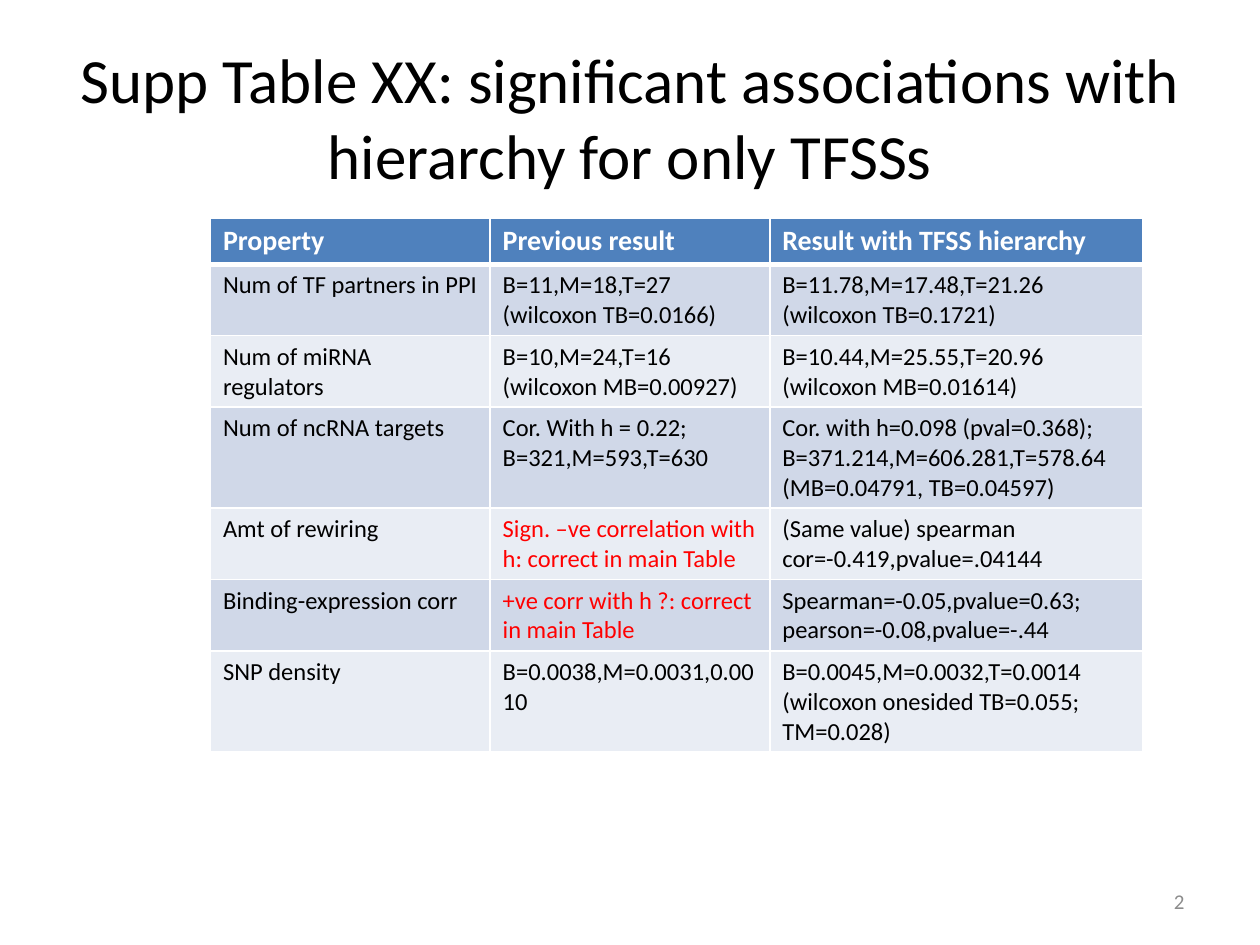
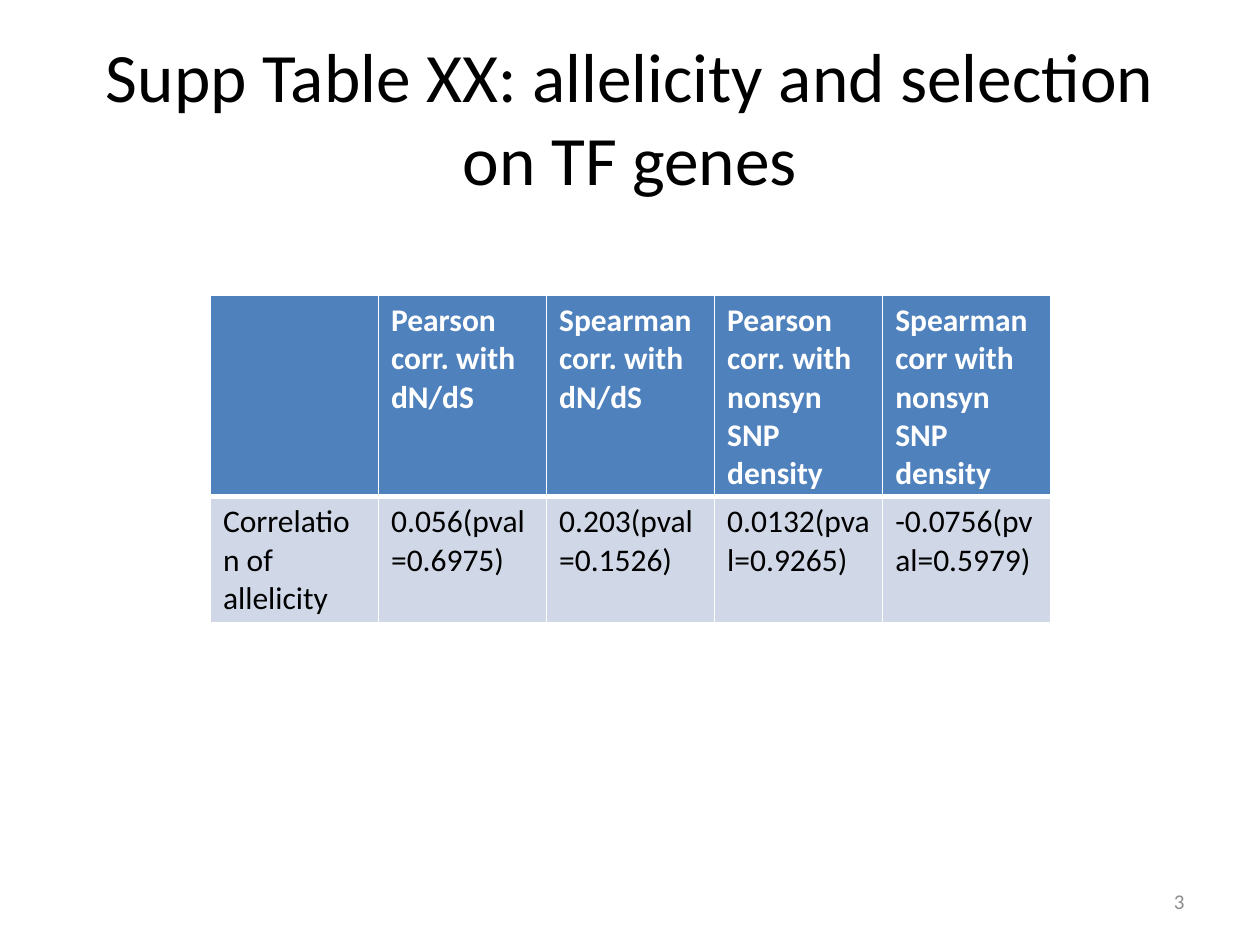
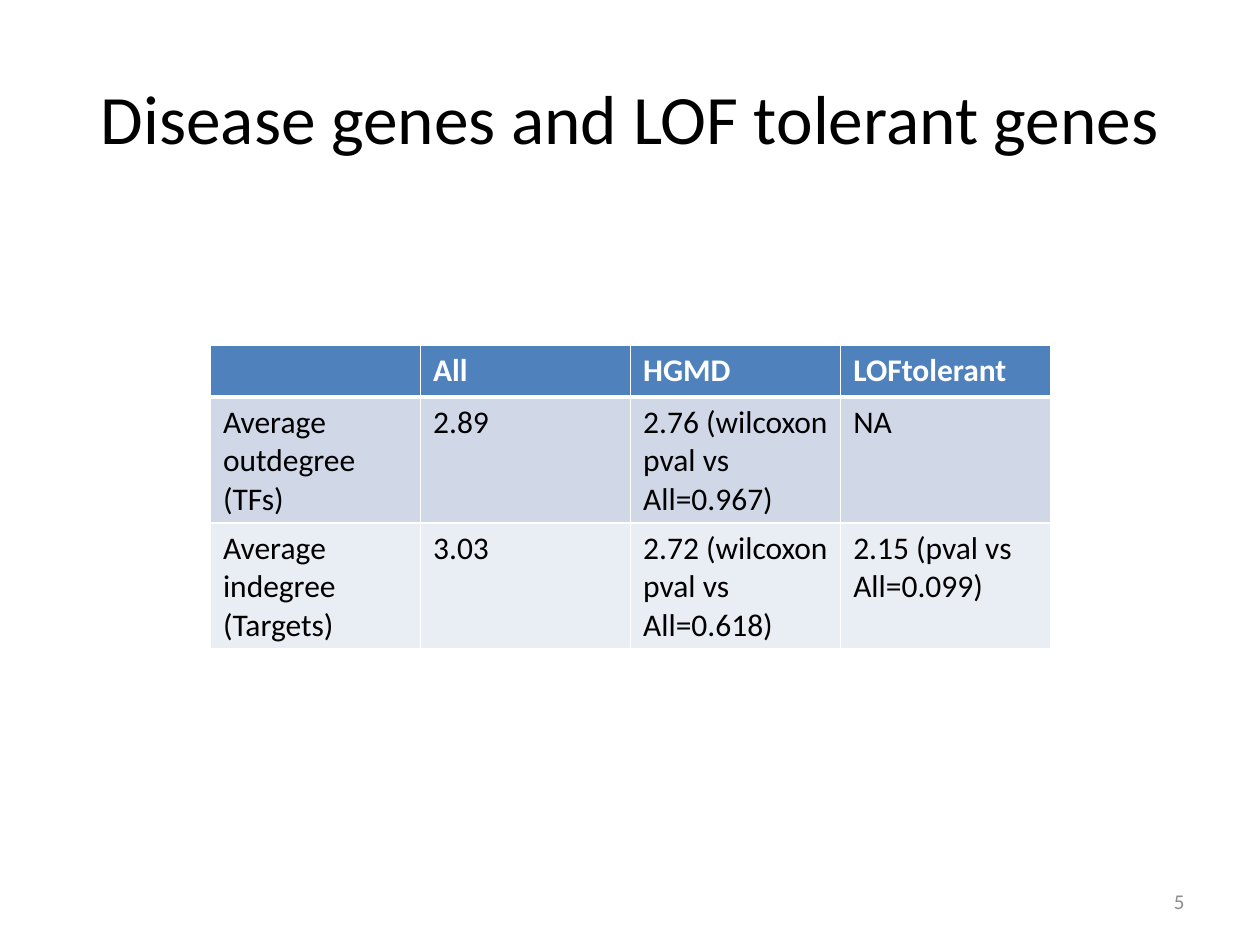
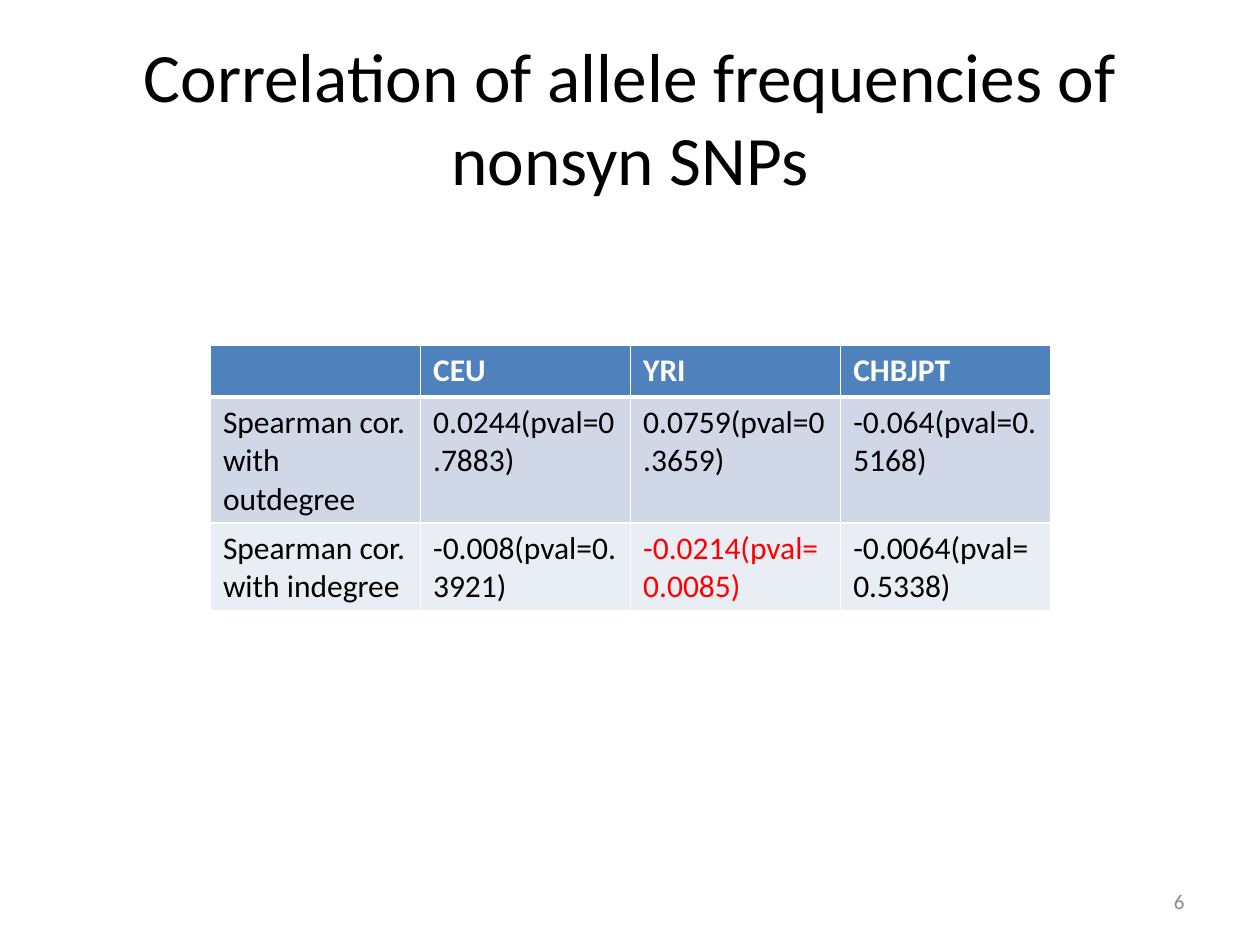
from dataclasses import dataclass

from lxml import etree
from pptx import Presentation
from pptx import util as u
from pptx.dml.color import RGBColor
from pptx.enum import text
from pptx.oxml.ns import qn


@dataclass(frozen=True)
class Theme:
    font: str = "Calibri"
    ink: str = "000000"
    white: str = "FFFFFF"
    header: str = "4F81BD"
    bands: tuple = ("D0D8E8", "E9EDF4")
    alert: str = "FF0000"
    muted: str = "8C8C8C"
    title: float = 39.6
    title_small: float = 36
    table_head: float = 18
    table_body: float = 18
    dense_head: float = 16
    dense_body: float = 14
    number: float = 12
    rule: float = 1
    header_rule: float = 3


T = Theme()
TABLE_LEFT = 1.67
TABLE_WIDTH = 6.67


def style_text(tf, size, color, bold=False, align=text.PP_ALIGN.LEFT):
    for p in tf.paragraphs:
        p.alignment = align
        for r in p.runs:
            r.font.name = T.font
            r.font.size = u.Pt(size)
            r.font.bold = bold
            r.font.color.rgb = RGBColor.from_string(color)


def add_text(s, words, box, size, color, align):
    tf = s.shapes.add_textbox(*map(u.Inches, box)).text_frame
    tf.word_wrap = True
    tf.vertical_anchor = text.MSO_ANCHOR.MIDDLE
    tf.text = words
    style_text(tf, size, color, align=align)


def add_slide(prs, title, number, size=T.title):
    s = prs.slides.add_slide(prs.slide_layouts[6])
    add_text(s, title, (0.5, 0.3, 9, 1.25), size, T.ink, text.PP_ALIGN.CENTER)
    add_text(s, str(number), (7.17, 6.95, 2.33, 0.4), T.number, T.muted, text.PP_ALIGN.RIGHT)
    return s


def set_borders(cell, top, bottom):
    tc_pr = cell._tc.get_or_add_tcPr()
    for side, width in (("L", T.rule), ("R", T.rule), ("T", top), ("B", bottom)):
        ln = etree.SubElement(tc_pr, qn(f"a:ln{side}"), w=str(u.Pt(width)))
        fill = etree.SubElement(ln, qn("a:solidFill"))
        etree.SubElement(fill, qn("a:srgbClr"), val=T.white)


def add_table(s, rows, top, widths=None, row_height=0.41,
              head_size=T.table_head, body_size=T.table_body, alerts=()):
    n = len(rows[0])
    widths = widths or [TABLE_WIDTH / n] * n
    box = (TABLE_LEFT, top, sum(widths), row_height * len(rows))
    table = s.shapes.add_table(len(rows), n, *map(u.Inches, box)).table
    table.horz_banding = False
    for column, width in zip(table.columns, widths):
        column.width = u.Inches(width)
    for i, row in enumerate(rows):
        head = i == 0
        for j, words in enumerate(row):
            cell = table.cell(i, j)
            cell.text = words
            set_borders(cell, T.header_rule if i == 1 else T.rule,
                        T.header_rule if head else T.rule)
            cell.fill.solid()
            fill = T.header if head else T.bands[(i - 1) % 2]
            cell.fill.fore_color.rgb = RGBColor.from_string(fill)
            color = T.white if head else T.alert if (i, j) in alerts else T.ink
            style_text(cell.text_frame, head_size if head else body_size, color, bold=head)


def hierarchy_slide(prs):
    s = add_slide(prs, "Supp Table XX: significant associations with hierarchy for only TFSSs",
                  2, T.title_small)
    rows = [
        ("Property", "Previous result", "Result with TFSS hierarchy"),
        ("Num of TF partners in PPI", "B=11,M=18,T=27\n(wilcoxon TB=0.0166)",
         "B=11.78,M=17.48,T=21.26 (wilcoxon TB=0.1721)"),
        ("Num of miRNA regulators", "B=10,M=24,T=16 (wilcoxon MB=0.00927)",
         "B=10.44,M=25.55,T=20.96\n(wilcoxon MB=0.01614)"),
        ("Num of ncRNA targets", "Cor. With h = 0.22;\nB=321,M=593,T=630",
         "Cor. with h=0.098 (pval=0.368);\n"
         "B=371.214,M=606.281,T=578.64 (MB=0.04791, TB=0.04597)"),
        ("Amt of rewiring", "Sign. –ve correlation with h: correct in main Table",
         "(Same value) spearman cor=-0.419,pvalue=.04144"),
        ("Binding-expression corr", "+ve corr with h ?: correct in main Table",
         "Spearman=-0.05,pvalue=0.63; pearson=-0.08,pvalue=-.44"),
        ("SNP density", "B=0.0038,M=0.0031,0.0010",
         "B=0.0045,M=0.0032,T=0.0014\n(wilcoxon onesided TB=0.055; TM=0.028)"),
    ]
    add_table(s, rows, 1.73, (2.22, 2.22, 2.96), 0.24,
              T.dense_head, T.dense_body, alerts={(4, 1), (5, 1)})


def allelicity_slide(prs):
    s = add_slide(prs, "Supp Table XX: allelicity and selection on TF genes", 3)
    rows = [
        ("", "Pearson corr. with dN/dS", "Spearman corr. with dN/dS",
         "Pearson corr. with nonsyn SNP density", "Spearman corr with nonsyn SNP density"),
        ("Correlation of allelicity", "0.056(pval=0.6975)", "0.203(pval=0.1526)",
         "0.0132(pval=0.9265)", "-0.0756(pval=0.5979)"),
    ]
    add_table(s, rows, 2.34)


def disease_slide(prs):
    s = add_slide(prs, "Disease genes and LOF tolerant genes", 5)
    rows = [
        ("", "All", "HGMD", "LOFtolerant"),
        ("Average outdegree (TFs)", "2.89", "2.76 (wilcoxon pval vs All=0.967)", "NA"),
        ("Average indegree (Targets)", "3.03", "2.72 (wilcoxon pval vs All=0.618)",
         "2.15 (pval vs All=0.099)"),
    ]
    add_table(s, rows, 2.74)


def frequency_slide(prs):
    s = add_slide(prs, "Correlation of allele frequencies of nonsyn SNPs", 6)
    rows = [
        ("", "CEU", "YRI", "CHBJPT"),
        ("Spearman cor. with outdegree", "0.0244(pval=0.7883)", "0.0759(pval=0.3659)",
         "-0.064(pval=0.5168)"),
        ("Spearman cor. with indegree", "-0.008(pval=0.3921)", "-0.0214(pval=0.0085)",
         "-0.0064(pval=0.5338)"),
    ]
    add_table(s, rows, 2.74, alerts={(2, 2)})


def main():
    prs = Presentation()
    prs.slide_width, prs.slide_height = u.Inches(10), u.Inches(7.5)
    hierarchy_slide(prs)
    allelicity_slide(prs)
    disease_slide(prs)
    frequency_slide(prs)
    prs.save("out.pptx")


if __name__ == "__main__":
    main()
